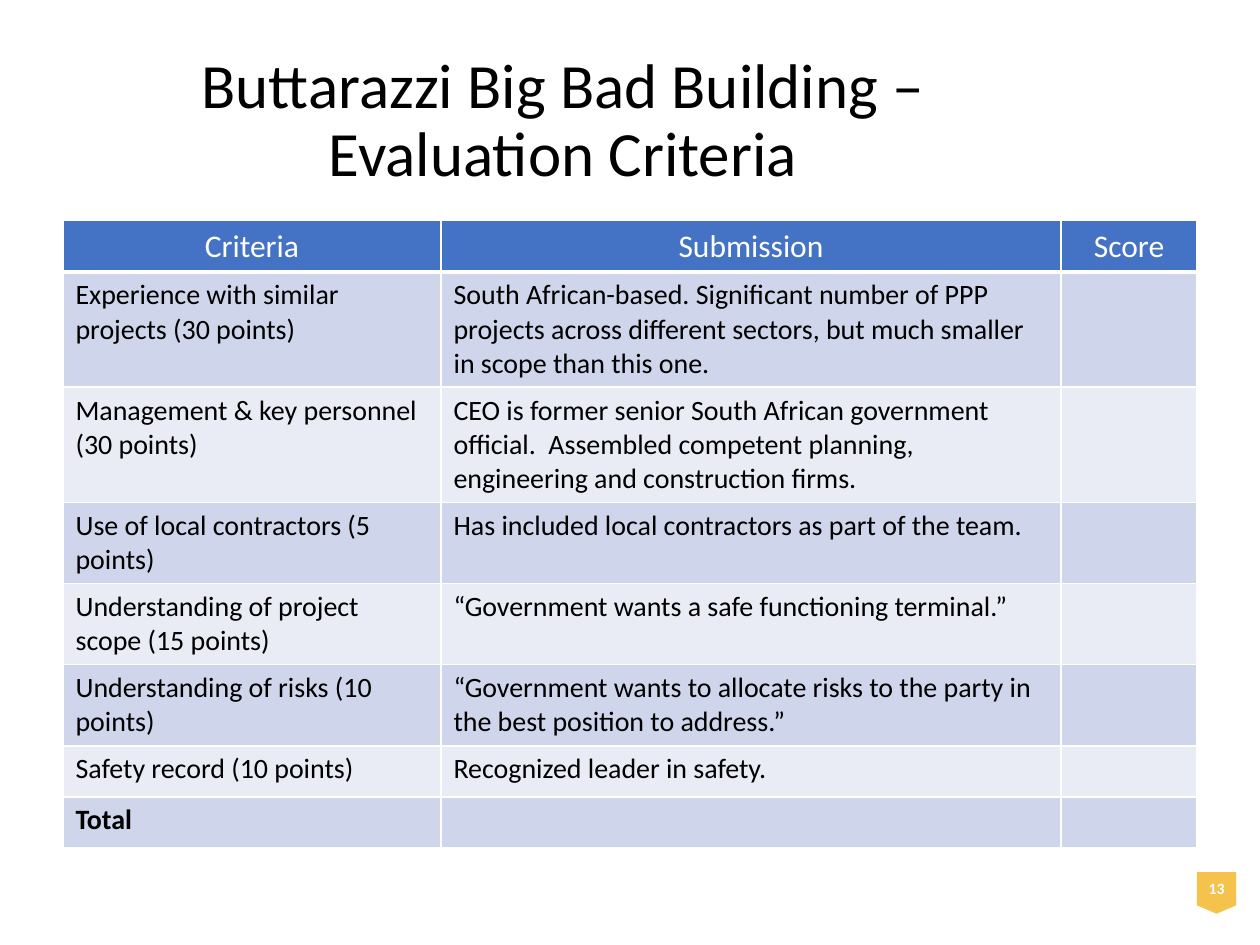
from lxml.etree import SubElement
from pptx import Presentation
from pptx.dml.color import RGBColor
from pptx.enum.shapes import MSO_SHAPE
from pptx.enum.text import MSO_ANCHOR, MSO_AUTO_SIZE, PP_ALIGN
from pptx.oxml.ns import qn
from pptx.util import Cm, Pt

COLORS = {
    "text": "000000",
    "white": "FFFFFF",
    "header": "4472C4",
    "odd": "CFD5EA",
    "even": "E9EBF5",
    "badge": "F5C24C",
}
FONT = "Calibri"

HEADINGS = ("Criteria", "Submission", "Score")
CRITERIA = [
    ("Experience with similar projects (30 points)",
     "South African-based. Significant number of PPP projects across different "
     "sectors, but much smaller in scope than this one."),
    ("Management & key personnel (30 points)",
     "CEO is former senior South African government official.  Assembled "
     "competent planning, engineering and construction firms."),
    ("Use of local contractors (5 points)",
     "Has included local contractors as part of the team."),
    ("Understanding of project scope (15 points)",
     "“Government wants a safe functioning terminal.”"),
    ("Understanding of risks (10 points)",
     "“Government wants to allocate risks to the party in the best position "
     "to address.”"),
    ("Safety record (10 points)", "Recognized leader in safety."),
    ("Total", ""),
]


class SlideBuilder:
    """Holds the style and the current slide."""

    def __init__(self, page):
        self.page = page

    def color(self, name):
        return RGBColor.from_string(COLORS[name])

    def set_text(self, frame, text, size, color, align=PP_ALIGN.LEFT, bold=False):
        frame.text = text
        para = frame.paragraphs[0]
        para.alignment = align
        for span in para.runs:
            span.font.name = FONT
            span.font.size = Pt(size)
            span.font.bold = bold
            span.font.color.rgb = self.color(color)
        return para

    def title(self, text, left, top, width, height):
        box = self.page.shapes.title
        box.left, box.top, box.width, box.height = left, top, width, height
        frame = box.text_frame
        frame.word_wrap = True
        frame.auto_size = MSO_AUTO_SIZE.NONE
        frame.vertical_anchor = MSO_ANCHOR.MIDDLE
        para = self.set_text(frame, text, 36, "text", PP_ALIGN.CENTER)
        para.line_spacing = 0.9

    def borders(self, cell, bottom_width):
        properties = cell._tc.get_or_add_tcPr()
        for side, width in (("L", 1), ("R", 1), ("T", 1), ("B", bottom_width)):
            line = SubElement(properties, qn(f"a:ln{side}"), w=str(Pt(width)))
            fill = SubElement(line, qn("a:solidFill"))
            SubElement(fill, qn("a:srgbClr"), val=COLORS["white"])

    def cell(self, cell, text, fill, bottom_width=1, **style):
        self.borders(cell, bottom_width)
        cell.fill.solid()
        cell.fill.fore_color.rgb = self.color(fill)
        if text:
            self.set_text(cell.text_frame, text, **style)

    def table(self, headings, rows, left, top, widths, row_height):
        count = len(rows) + 1
        table = self.page.shapes.add_table(
            count, len(widths), left, top, sum(widths), row_height * count).table
        for column, width in zip(table.columns, widths):
            column.width = width
        for row in table.rows:
            row.height = row_height
        for index, heading in enumerate(headings):
            self.cell(table.cell(0, index), heading, "header", bottom_width=3,
                      size=18, color="white", align=PP_ALIGN.CENTER)
        for number, (criterion, submission) in enumerate(rows, 1):
            fill = "odd" if number % 2 else "even"
            for index, text in enumerate((criterion, submission, "")):
                self.cell(table.cell(number, index), text, fill,
                          size=16, color="text", bold=text == "Total")

    def badge(self, text, left, top, width, height):
        box = self.page.shapes.add_shape(
            MSO_SHAPE.FLOWCHART_OFFPAGE_CONNECTOR, left, top, width, height)
        box.shadow.inherit = False
        box.fill.solid()
        box.fill.fore_color.rgb = self.color("badge")
        box.line.fill.background()
        frame = box.text_frame
        frame.margin_left = frame.margin_right = Cm(0.18)
        frame.margin_top = frame.margin_bottom = Cm(0.1)
        frame.word_wrap = False
        frame.vertical_anchor = MSO_ANCHOR.MIDDLE
        self.set_text(frame, text, 9, "white", PP_ALIGN.CENTER, bold=True)


def main():
    deck = Presentation()
    deck.slide_width, deck.slide_height = Cm(25.4), Cm(19.05)
    page = deck.slides.add_slide(deck.slide_layouts[5])
    builder = SlideBuilder(page)

    # Page number
    builder.badge("13", Cm(24.13), Cm(17.58), Cm(0.79), Cm(0.84))

    # Title
    builder.title("Buttarazzi Big Bad Building – Evaluation Criteria",
                  Cm(1.75), Cm(1.02), Cm(19.2), Cm(2.9))

    # Scoring table
    builder.table(HEADINGS, CRITERIA, Cm(1.27), Cm(4.45),
                  (Cm(7.62), Cm(12.5), Cm(2.74)), Cm(1.03))

    deck.save("out.pptx")


if __name__ == "__main__":
    main()
